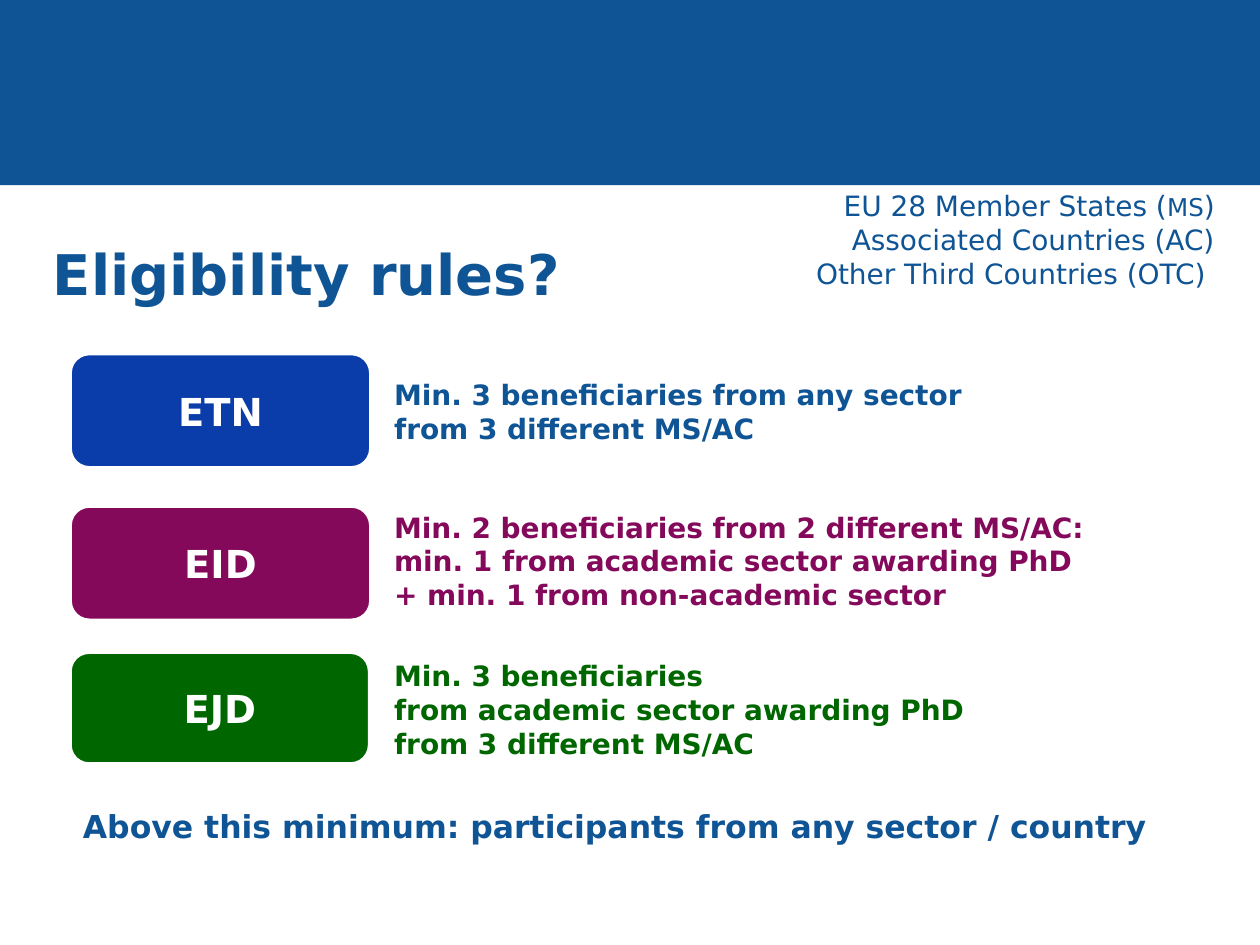
from dataclasses import dataclass

from pptx import Presentation
from pptx import util as u
from pptx.dml.color import RGBColor
from pptx.enum import shapes, text

W, H = 10, 7.5
FONT = "DejaVu Sans"
COLORS = {
    "blue": "0F5494",
    "royal": "0A3CAA",
    "plum": "84095B",
    "green": "006600",
    "white": "FFFFFF",
}
LABEL_X, RULE_X = 0.056 * W, 0.303 * W


@dataclass
class Scheme:
    label: str
    fill: str
    ink: str
    top: float
    size: tuple[float, float]
    rule: str  # \v breaks a line, \n starts a paragraph
    rule_top: float
    rule_size: tuple[float, float]


SCHEMES = [
    Scheme("ETN", "royal", "blue", 2.81, (2.38, 0.9),
           "Min. 3 beneficiaries from any sector \vfrom 3 different MS/AC",
           2.95, (6.61, 0.64)),
    Scheme("EID", "plum", "plum", 4.02, (2.38, 0.9),
           "Min. 2 beneficiaries from 2 different MS/AC: \v"
           "min. 1 from academic sector awarding PhD\n"
           "+ min. 1 from non-academic sector",
           4, (6.7, 0.91)),
    Scheme("EJD", "green", "green", 5.18, (2.37, 0.88),
           "Min. 3 beneficiaries\vfrom academic sector awarding PhD\n"
           "from 3 different MS/AC",
           5.18, (6.26, 0.91)),
]


def rgb(name: str) -> RGBColor:
    return RGBColor.from_string(COLORS[name])


def inches(*lengths: float) -> list[u.Length]:
    return [u.Inches(n) for n in lengths]


def style(tf, size: float, color: str, bold: bool = True,
          align=text.PP_ALIGN.LEFT) -> None:
    for p in tf.paragraphs:
        p.alignment = align
        p.font.name = FONT
        p.font.size = u.Pt(size)
        p.font.bold = bold
        p.font.color.rgb = rgb(color)


def add_text(s, box: tuple, words: str, size: float, color: str, **look):
    tf = s.shapes.add_textbox(*inches(*box)).text_frame
    tf.word_wrap = True
    tf.text = words
    style(tf, size, color, **look)
    return tf


def add_block(s, kind, box: tuple, color: str):
    sp = s.shapes.add_shape(kind, *inches(*box))
    sp.shadow.inherit = False
    sp.fill.solid()
    sp.fill.fore_color.rgb = rgb(color)
    sp.line.fill.background()
    return sp


def add_scheme(s, scheme: Scheme) -> None:
    sp = add_block(s, shapes.MSO_SHAPE.ROUNDED_RECTANGLE,
                   (LABEL_X, scheme.top, *scheme.size), scheme.fill)
    sp.line.color.rgb = rgb("white")
    sp.line.width = u.Pt(1.5)
    tf = sp.text_frame
    tf.word_wrap = False
    tf.vertical_anchor = text.MSO_ANCHOR.MIDDLE
    tf.text = scheme.label
    style(tf, 22, "white", align=text.PP_ALIGN.CENTER)
    add_text(s, (RULE_X, scheme.rule_top, *scheme.rule_size),
             scheme.rule, 16, scheme.ink)


def add_country_key(s) -> None:
    tf = add_text(s, (5.51, 1.45, 4.23, 0.91),
                  "EU 28 Member States (\nAssociated Countries (AC)\n"
                  "Other Third Countries (OTC) ",
                  16, "blue", bold=False, align=text.PP_ALIGN.RIGHT)
    p = tf.paragraphs[0]
    for words, size in (("MS", 14), (")", 16)):
        r = p.add_run()
        r.text = words
        r.font.size = u.Pt(size)


def main() -> None:
    prs = Presentation()
    prs.slide_width, prs.slide_height = inches(W, H)
    s = prs.slides.add_slide(prs.slide_layouts[6])

    add_block(s, shapes.MSO_SHAPE.RECTANGLE, (0, 0, W, 1.47), "blue")
    add_country_key(s)
    title = add_text(s, (0.42, 1.9, 9.22, 0.63), "Eligibility rules?", 32, "blue")
    title.margin_left = title.margin_right = 0
    title.margin_top = title.margin_bottom = 0
    for scheme in SCHEMES:
        add_scheme(s, scheme)
    add_text(s, (LABEL_X, 6.36, 9.14, 0.4),
             "Above this minimum: participants from any sector / country",
             18, "blue")
    prs.save("out.pptx")


if __name__ == "__main__":
    main()
